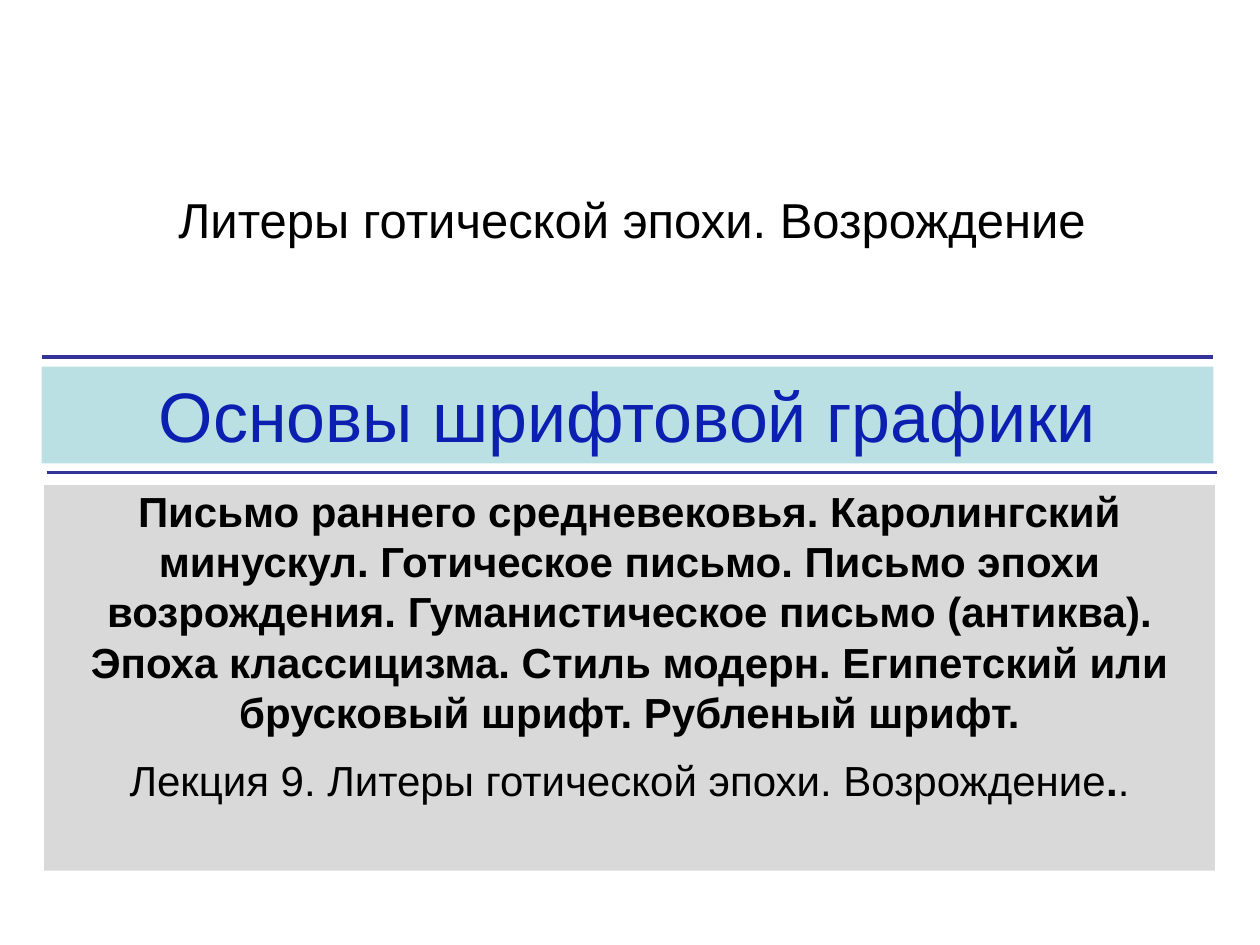
from dataclasses import dataclass

from lxml.etree import SubElement
from pptx import Presentation
from pptx.dml.color import RGBColor
from pptx.enum.shapes import MSO_CONNECTOR, MSO_SHAPE
from pptx.enum.text import MSO_ANCHOR, PP_ALIGN
from pptx.oxml.ns import qn
from pptx.util import Pt


@dataclass(frozen=True)
class Theme:
    font: str = "Arial"
    ink: str = "000000"
    rule: str = "333399"
    title: str = "0B20B1"
    band: str = "BBE0E3"
    panel: str = "D9D9D9"
    big: int = 40
    mid: int = 28
    small: int = 24
    lead: float = 1.2
    gap: int = 10


@dataclass(frozen=True)
class Box:
    left: float
    top: float
    width: float
    height: float


@dataclass(frozen=True)
class Para:
    runs: tuple[str, ...]
    size: int
    color: str
    bold: tuple[bool, ...] = (False,)


THEME = Theme()
RULES = ((24, 204), (26.7, 270))
SPAN = 669
BAND = Box(23.8, 209.5, 669.6, 55.4)
PANEL = Box(25.2, 277.2, 669, 220.3)
HEAD = Box(26.6, 40.3, 669, 170)

TITLE = (Para(("Основы шрифтовой графики",), THEME.big, THEME.title),)
TOPIC = (Para(("Литеры готической эпохи. Возрождение",), THEME.mid, THEME.ink),)
PLAN = (
    Para(
        (
            "Письмо раннего средневековья. Каролингский минускул. "
            "Готическое письмо. Письмо эпохи возрождения. "
            "Гуманистическое письмо (антиква). Эпоха классицизма. "
            "Стиль модерн. Египетский или брусковый шрифт. Рубленый шрифт.",
        ),
        THEME.small,
        THEME.ink,
        (True,),
    ),
    Para(
        ("Лекция 9. Литеры готической эпохи. Возрождение", ".", "."),
        THEME.small,
        THEME.ink,
        (False, True, False),
    ),
)


def add_rule(slide, left: float, top: float) -> None:
    line = slide.shapes.add_connector(
        MSO_CONNECTOR.STRAIGHT, Pt(left), Pt(top), Pt(left + SPAN), Pt(top)
    )
    line.line.color.rgb = RGBColor.from_string(THEME.rule)
    line.line.width = Pt(2)
    SubElement(line._element.spPr, qn("a:effectLst"))


def add_text(shape, paras: tuple[Para, ...], anchor, inset: bool = False) -> None:
    """Fill a shape with centred paragraphs, with side margins if inset."""
    frame = shape.text_frame
    frame.word_wrap = True
    frame.vertical_anchor = anchor
    frame.margin_left = frame.margin_right = Pt(7.2 if inset else 0)
    frame.margin_top = frame.margin_bottom = Pt(3.6 if inset else 0)
    for i, para in enumerate(paras):
        item = frame.add_paragraph() if i else frame.paragraphs[0]
        item.alignment = PP_ALIGN.CENTER
        item.line_spacing = Pt(para.size * THEME.lead)
        if i:
            item.space_before = Pt(THEME.gap)
        item.font.name = THEME.font
        item.font.size = Pt(para.size)
        item.font.color.rgb = RGBColor.from_string(para.color)
        if len(para.runs) == 1:
            item.font.bold = para.bold[0]
        for text, bold in zip(para.runs, para.bold):
            run = item.add_run()
            run.text = text
            if len(para.runs) > 1:
                run.font.bold = bold


def place(box: Box) -> tuple[Pt, Pt, Pt, Pt]:
    return Pt(box.left), Pt(box.top), Pt(box.width), Pt(box.height)


def add_panel(slide, box: Box, fill: str):
    shape = slide.shapes.add_shape(MSO_SHAPE.RECTANGLE, *place(box))
    shape.shadow.inherit = False
    shape.fill.solid()
    shape.fill.fore_color.rgb = RGBColor.from_string(fill)
    shape.line.fill.background()
    return shape


def main() -> None:
    deck = Presentation()
    deck.slide_width, deck.slide_height = Pt(720), Pt(540)
    slide = deck.slides.add_slide(deck.slide_layouts[6])
    for left, top in RULES:
        add_rule(slide, left, top)
    add_text(add_panel(slide, BAND, THEME.band), TITLE, MSO_ANCHOR.TOP, inset=True)
    add_text(add_panel(slide, PANEL, THEME.panel), PLAN, MSO_ANCHOR.TOP)
    add_text(slide.shapes.add_textbox(*place(HEAD)), TOPIC, MSO_ANCHOR.MIDDLE)
    deck.save("out.pptx")


if __name__ == "__main__":
    main()
